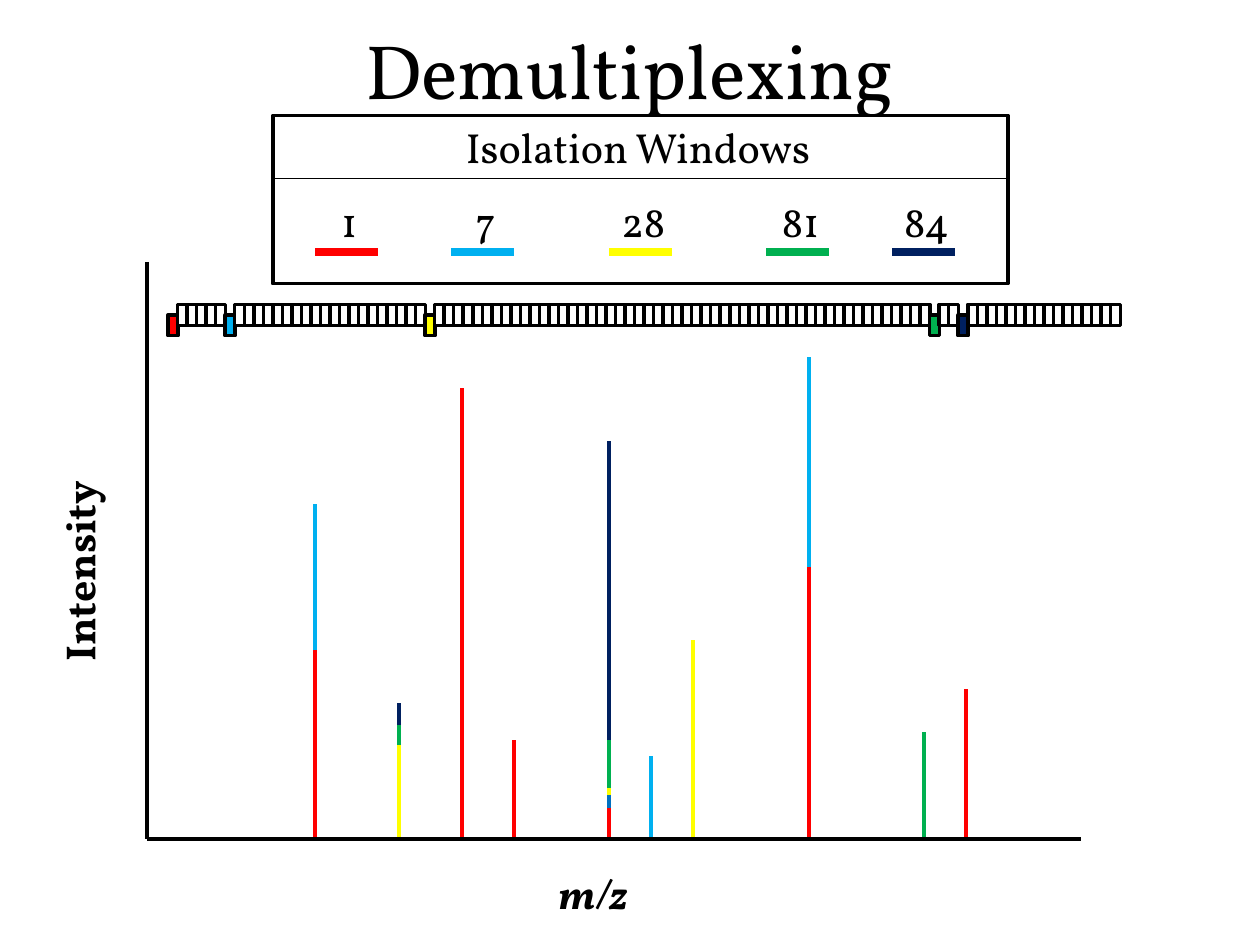
from dataclasses import dataclass

from lxml.etree import SubElement
from pptx import Presentation
from pptx.dml.color import RGBColor
from pptx.enum.shapes import MSO_CONNECTOR, MSO_SHAPE
from pptx.enum.text import MSO_ANCHOR, MSO_AUTO_SIZE, PP_ALIGN
from pptx.oxml.ns import qn
from pptx.util import Cm, Pt

FONT = "Vollkorn"
BLACK, WHITE = "000000", "FFFFFF"
RED, SKY, YELLOW, GREEN, NAVY = "FF0000", "00B0F0", "FFFF00", "00B050", "002060"
BLUE = "0070C0"

AXIS_LEFT, AXIS_RIGHT = 2.96, 21.8
AXIS_TOP, BASELINE = 5.28, 16.92
LEGEND_LEFT, LEGEND_TOP, LEGEND_WIDTH, LEGEND_HEIGHT = 5.5, 2.33, 14.82, 3.39
LEGEND_DIVIDER, SWATCH_TOP, SWATCH_WIDTH = 3.6, 5.08, 1.27
STRIP_LEFT, STRIP_TOP, STRIP_WIDTH, CELL_COUNT = 3.39, 6.14, 19.19, 100
CELL_WIDTH, CELL_HEIGHT, SELECTED_DROP = 0.2, 0.42, 0.21


@dataclass(frozen=True)
class IsolationWindow:
    number: int
    swatch_left: float
    color: str


@dataclass(frozen=True)
class PeakSegment:
    x: float
    bottom: float
    top: float
    color: str


WINDOWS = [
    IsolationWindow(1, 6.35, RED),
    IsolationWindow(7, 9.1, SKY),
    IsolationWindow(28, 12.28, YELLOW),
    IsolationWindow(81, 15.45, GREEN),
    IsolationWindow(84, 17.99, NAVY),
]

SEGMENTS = [
    PeakSegment(6.35, BASELINE, 12.9, RED),
    PeakSegment(6.35, 13.11, 10.16, SKY),
    PeakSegment(9.31, BASELINE, 7.82, RED),
    PeakSegment(10.37, BASELINE, 14.91, RED),
    PeakSegment(12.28, BASELINE, 16.18, RED),
    PeakSegment(12.28, 15.01, 8.89, NAVY),
    PeakSegment(12.28, 16.28, 15.93, BLUE),
    PeakSegment(12.28, 16.03, 15.65, YELLOW),
    PeakSegment(12.28, 15.88, 14.91, GREEN),
    PeakSegment(16.3, BASELINE, 11.43, RED),
    PeakSegment(16.3, 11.43, 7.19, SKY),
    PeakSegment(13.12, 16.87, 15.24, SKY),
    PeakSegment(13.97, 16.87, 12.9, YELLOW),
    PeakSegment(8.05, BASELINE, 14.91, YELLOW),
    PeakSegment(8.05, 15.01, 14.61, GREEN),
    PeakSegment(8.05, 14.61, 14.17, NAVY),
    PeakSegment(18.63, BASELINE, 14.76, GREEN),
    PeakSegment(19.47, BASELINE, 13.89, RED),
]


def color_of(value: str) -> RGBColor:
    return RGBColor.from_string(value)


def add_line(shapes, start: tuple[float, float], end: tuple[float, float],
             color: str = BLACK, width: float = 2.25) -> None:
    connector = shapes.add_connector(
        MSO_CONNECTOR.STRAIGHT, *(Cm(value) for value in (*start, *end)))
    connector.line.color.rgb = color_of(color)
    connector.line.width = Pt(width)
    SubElement(connector.element.spPr, qn("a:effectLst"))


def add_rectangle(shapes, left: float, top: float, width: float, height: float,
                  fill: str = WHITE) -> None:
    shape = shapes.add_shape(
        MSO_SHAPE.RECTANGLE, Cm(left), Cm(top), Cm(width), Cm(height))
    shape.shadow.inherit = False
    shape.fill.solid()
    shape.fill.fore_color.rgb = color_of(fill)
    shape.line.color.rgb = color_of(BLACK)
    shape.line.width = Pt(2)


def add_text(shapes, text: str, *, left: float, top: float, width: float,
             height: float = 1.27, size: float = 24, bold: bool = False,
             italic: bool = False, rotation: float = 0,
             anchor: MSO_ANCHOR = MSO_ANCHOR.TOP,
             fit: MSO_AUTO_SIZE = MSO_AUTO_SIZE.SHAPE_TO_FIT_TEXT) -> None:
    shape = shapes.add_textbox(Cm(left), Cm(top), Cm(width), Cm(height))
    shape.rotation = rotation
    frame = shape.text_frame
    frame.word_wrap = True
    frame.auto_size = fit
    frame.vertical_anchor = anchor
    paragraph = frame.paragraphs[0]
    paragraph.alignment = PP_ALIGN.CENTER
    run = paragraph.add_run()
    run.text = text
    run.font.name = FONT
    run.font.size = Pt(size)
    run.font.bold = bold
    run.font.italic = italic
    run.font.color.rgb = color_of(BLACK)


def draw_spectrum(shapes) -> None:
    add_line(shapes, (AXIS_LEFT, AXIS_TOP), (AXIS_LEFT, BASELINE))
    for segment in SEGMENTS:
        add_line(shapes, (segment.x, segment.bottom), (segment.x, segment.top),
                 segment.color)
    add_text(shapes, "m/z", left=9.31, top=17.36, width=5.29, bold=True, italic=True)
    add_text(shapes, "Intensity", left=-1.06, top=10.88, width=5.29, bold=True,
             rotation=270)
    add_line(shapes, (AXIS_LEFT, BASELINE), (AXIS_RIGHT, BASELINE))


def draw_legend(shapes) -> None:
    add_rectangle(shapes, LEGEND_LEFT, LEGEND_TOP, LEGEND_WIDTH, LEGEND_HEIGHT)
    for window in WINDOWS:
        left = window.swatch_left
        add_line(shapes, (left, SWATCH_TOP), (left + SWATCH_WIDTH, SWATCH_TOP),
                 window.color, 5)
        add_text(shapes, str(window.number), left=left - 0.1, top=3.81, width=1.58)
    add_text(shapes, "Isolation Windows", left=6.67, top=LEGEND_TOP, width=12.38)
    add_line(shapes, (LEGEND_LEFT, LEGEND_DIVIDER),
             (LEGEND_LEFT + LEGEND_WIDTH, LEGEND_DIVIDER), width=0.75)


def draw_window_strip(shapes) -> None:
    selected = {window.number: window.color for window in WINDOWS}
    pitch = STRIP_WIDTH / CELL_COUNT
    for number in range(1, CELL_COUNT + 1):
        drop = SELECTED_DROP if number in selected else 0
        add_rectangle(shapes, STRIP_LEFT + (number - 1) * pitch, STRIP_TOP + drop,
                      CELL_WIDTH, CELL_HEIGHT, selected.get(number, WHITE))


def main() -> None:
    presentation = Presentation()
    presentation.slide_width = Cm(25.4)
    presentation.slide_height = Cm(19.05)
    slide = presentation.slides.add_slide(presentation.slide_layouts[6])
    add_text(slide.shapes, "Demultiplexing", left=1.27, top=-0.21, width=22.86,
             height=3.18, size=44, anchor=MSO_ANCHOR.MIDDLE, fit=MSO_AUTO_SIZE.NONE)
    draw_spectrum(slide.shapes)
    draw_legend(slide.shapes.add_group_shape().shapes)
    draw_window_strip(slide.shapes.add_group_shape().shapes)
    presentation.save("out.pptx")


if __name__ == "__main__":
    main()
